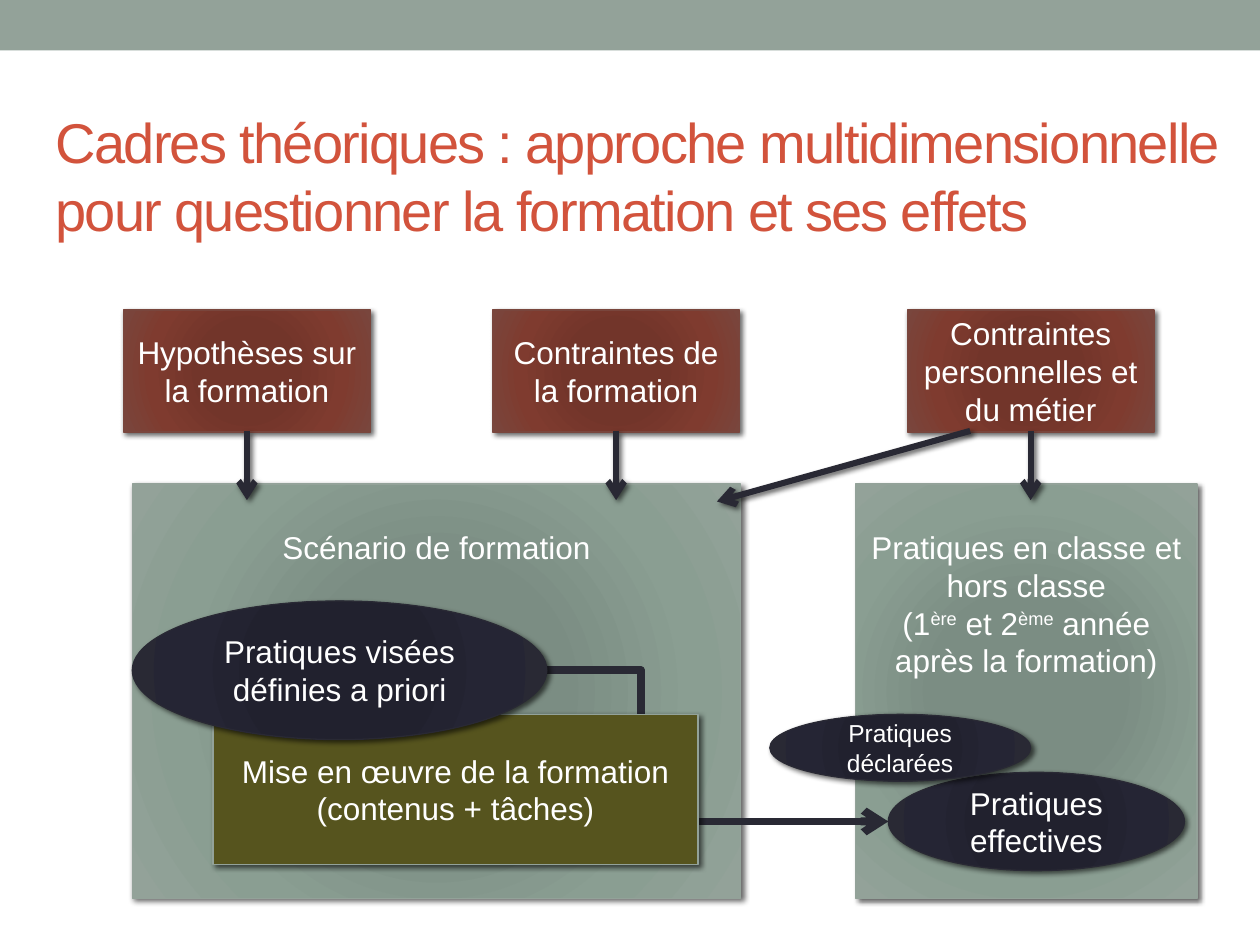
import pptx
import pptx.dml.color
import pptx.enum.shapes
import pptx.enum.text
import pptx.oxml
import pptx.util
from pptx.oxml.ns import nsdecls, qn

Inches, Pt = pptx.util.Inches, pptx.util.Pt
SHAPE = pptx.enum.shapes.MSO_SHAPE
CONNECTOR = pptx.enum.shapes.MSO_CONNECTOR
ANCHOR = pptx.enum.text.MSO_ANCHOR
ALIGN = pptx.enum.text.PP_ALIGN

SAGE, NAVY, BRICK = "93A299", "292934", "79463D"
OLIVE, RED, WHITE = "56541E", "D2533C", "FFFFFF"
STOPS = (0, 34, 70, 100)
GRADIENTS = {
    SAGE: ("7B8E82", "7B8D83", "8A9E92", SAGE),
    NAVY: ("21212F", "21212E", "252534", NAVY),
    BRICK: ("743327", "72352A", "7F3B2F", BRICK),
}


def rgb(hex_color):
    return pptx.dml.color.RGBColor.from_string(hex_color)


def element(tag, body):
    return pptx.oxml.parse_xml(f"<a:{tag} {nsdecls('a')}>{body}</a:{tag}>")


class Diagram:
    font = "Arial"

    def __init__(self, slide):
        self.slide = slide

    def format_run(self, r, size, color):
        r.font.name = self.font
        r.font.size = Pt(size)
        r.font.color.rgb = rgb(color)

    def add_shadow(self, spPr):
        """Replace the theme effect with a soft shadow to the lower right."""
        for old in spPr.findall(qn("a:effectLst")):
            spPr.remove(old)
        spPr.append(element(
            "effectLst",
            f'<a:outerShdw blurRad="{Pt(3)}" dist="{Pt(2)}" dir="2700000" algn="br" rotWithShape="0">'
            '<a:srgbClr val="000000"><a:alpha val="60000"/></a:srgbClr></a:outerShdw>'))

    def title(self, text, left, top, width, height):
        sp = self.slide.shapes.title
        sp.left, sp.top, sp.width, sp.height = map(Inches, (left, top, width, height))
        tf = sp.text_frame
        tf.text = text
        tf.auto_size = pptx.enum.text.MSO_AUTO_SIZE.NONE
        tf.vertical_anchor = ANCHOR.MIDDLE
        p = tf.paragraphs[0]
        p.alignment = ALIGN.LEFT
        for r in p.runs:
            self.format_run(r, 32, RED)
            r.font._element.set("spc", "-100")

    def band(self, left, top, width, height, color):
        sp = self.slide.shapes.add_shape(SHAPE.RECTANGLE, *map(Inches, (left, top, width, height)))
        sp.shadow.inherit = False
        sp.fill.solid()
        sp.fill.fore_color.rgb = rgb(color)
        sp.line.fill.background()

    def block(self, kind, lines, left, top, width, height, color, line=None, size=18, inset=None):
        """Add a shaded shape; with an inset its text starts that far below the top."""
        sp = self.slide.shapes.add_shape(kind, *map(Inches, (left, top, width, height)))
        spPr = sp._element.spPr
        if color in GRADIENTS:
            stops = "".join(
                f'<a:gs pos="{pos * 1000}"><a:srgbClr val="{shade}"/></a:gs>'
                for pos, shade in zip(STOPS, GRADIENTS[color]))
            spPr.find(qn("a:prstGeom")).addnext(element(
                "gradFill",
                f'<a:gsLst>{stops}</a:gsLst><a:path path="circle">'
                '<a:fillToRect l="100000" t="100000" r="100000" b="100000"/></a:path>'))
        else:
            sp.fill.solid()
            sp.fill.fore_color.rgb = rgb(color)
        sp.line.color.rgb = rgb(line or color)
        sp.line.width = Pt(0.75)
        self.add_shadow(spPr)
        self.label(sp.text_frame, lines, size, inset)

    def label(self, tf, lines, size, inset):
        """Set centred lines; parts between carets become superscript."""
        tf.word_wrap = True
        tf.vertical_anchor = ANCHOR.MIDDLE
        if inset is not None:
            tf.vertical_anchor = ANCHOR.TOP
            tf.margin_top = Inches(inset)
        for i, text in enumerate(lines):
            p = tf.add_paragraph() if i else tf.paragraphs[0]
            p.alignment = ALIGN.CENTER
            for j, part in enumerate(text.split("^")):
                r = p.add_run()
                r.text = part
                self.format_run(r, size, WHITE)
                if j % 2:
                    r.font._element.set("baseline", "30000")

    def arrow(self, start, end, width=3.5, bend=None):
        """Add an arrow; bend is the share of its width where an elbow turns."""
        kind = CONNECTOR.STRAIGHT if bend is None else CONNECTOR.ELBOW
        cx = self.slide.shapes.add_connector(kind, *map(Inches, (*start, *end)))
        cx.line.color.rgb = rgb(NAVY)
        cx.line.width = Pt(width)
        spPr = cx._element.spPr
        tail = element("tailEnd", "")
        tail.set("type", "arrow")
        spPr.find(qn("a:ln")).append(tail)
        if bend is None:
            self.add_shadow(spPr)
            return
        spPr.append(element("effectLst", ""))
        geom = spPr.find(qn("a:prstGeom"))
        for old in list(geom):
            geom.remove(old)
        geom.append(element("avLst", f'<a:gd name="adj1" fmla="val {round(bend * 100000)}"/>'))


def main():
    prs = pptx.Presentation()
    prs.slide_width, prs.slide_height = Inches(10), Inches(7.5)
    s = prs.slides.add_slide(prs.slide_layouts[5])
    d = Diagram(s)
    rect, oval = SHAPE.RECTANGLE, SHAPE.OVAL

    d.band(0, 0, 10, 0.4, SAGE)
    d.title("Cadres théoriques : approche multidimensionnelle pour questionner "
            "la formation et ses effets", 0.34, 0.58, 9.49, 1.62)

    panels = [
        (1.05, 4.83, ["Scénario de formation"]),
        (6.79, 2.71, ["Pratiques en classe et hors classe",
                      "(1^ère^ et 2^ème^ année après la formation)"]),
    ]
    for left, width, lines in panels:
        d.block(rect, lines, left, 3.84, width, 3.29, SAGE, inset=0.35)

    d.arrow((4.34, 5.32), (7.05, 6.52), width=4.5, bend=0.275)
    d.block(rect, ["Mise en œuvre de la formation", "(contenus + tâches)"],
            1.69, 5.67, 3.85, 1.19, OLIVE, line=SAGE)
    d.block(oval, ["Pratiques visées définies a priori"], 1.05, 4.77, 3.29, 1.1, NAVY)
    d.block(oval, ["Pratiques effectives"], 7.05, 6.13, 2.35, 0.78, NAVY)

    sources = [
        (0.98, "Hypothèses sur la formation"),
        (3.91, "Contraintes de la formation"),
        (7.2, "Contraintes personnelles et du métier"),
    ]
    for left, text in sources:
        d.block(rect, [text], left, 2.46, 1.96, 0.97, BRICK)
    for left, _ in sources:
        center = left + 0.98
        d.arrow((center, 3.42), (center, 3.97))

    d.block(oval, ["Pratiques déclarées"], 6.11, 5.67, 2.07, 0.53, NAVY, size=14)
    d.arrow((7.7, 3.42), (5.69, 3.98))

    prs.save("out.pptx")


if __name__ == "__main__":
    main()
